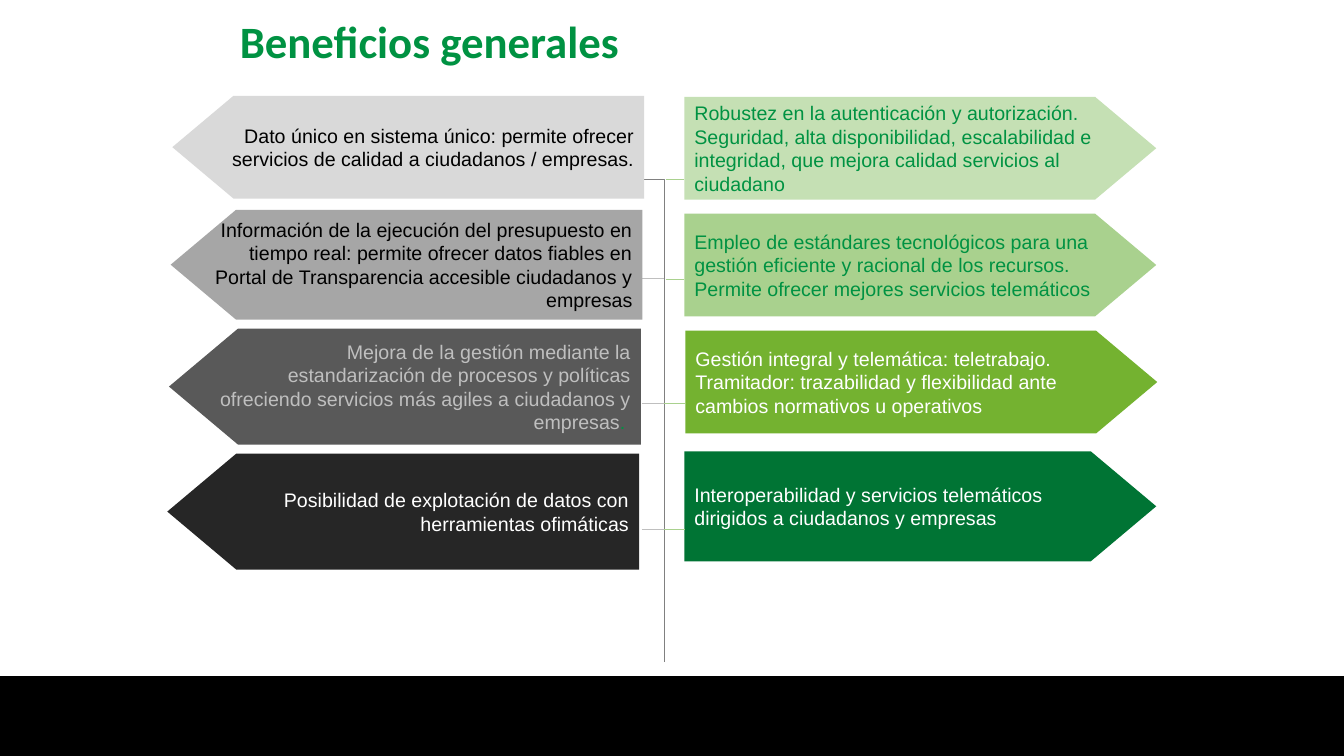
from dataclasses import dataclass

from lxml import etree
from pptx import Presentation
from pptx.dml.color import RGBColor
from pptx.enum.shapes import MSO_CONNECTOR, MSO_SHAPE
from pptx.enum.text import MSO_ANCHOR, PP_ALIGN
from pptx.oxml.ns import qn
from pptx.util import Pt

PLATE, RECTANGLE = MSO_SHAPE.PENTAGON, MSO_SHAPE.RECTANGLE
STRAIGHT = MSO_CONNECTOR.STRAIGHT
MIDDLE, BOTTOM = MSO_ANCHOR.MIDDLE, MSO_ANCHOR.BOTTOM
LEFT, RIGHT = PP_ALIGN.LEFT, PP_ALIGN.RIGHT


@dataclass(frozen=True)
class Theme:
    black: str = "000000"
    white: str = "FFFFFF"
    green: str = "009242"
    silver: str = "BFBFBF"
    trunk: str = "808080"
    branch: str = "A9D18E"
    grays: tuple = ("D9D9D9", "A6A6A6", "595959", "262626")
    greens: tuple = ("C5E0B4", "A9D18E", "74B230", "007434")
    title_font: str = "Calibri"
    body_font: str = "Arial"
    title_size: int = 32
    body_size: int = 14


class Page:
    def __init__(self, slide, theme):
        self.shapes = slide.shapes
        self.theme = theme

    def span(self, para, text, color, font, size, bold=False):
        run = para.add_run()
        run.text = text
        run.font.name, run.font.size, run.font.bold = font, Pt(size), bold
        run.font.color.rgb = RGBColor.from_string(color)

    def solid(self, kind, x, y, width, height, color):
        shape = self.shapes.add_shape(kind, Pt(x), Pt(y), Pt(width), Pt(height))
        shape.shadow.inherit = False
        shape.fill.solid()
        shape.fill.fore_color.rgb = RGBColor.from_string(color)
        shape.line.fill.background()
        return shape

    def plate(self, x, y, height, fill, paragraphs, points_left=False):
        """Each paragraph is a list of (text, color) spans."""
        shape = self.solid(PLATE, x, y, 337, height, fill)
        shape.adjustments[0] = 0.595
        if points_left:
            shape.rotation = 180
            shape._element.spPr.find(qn("a:xfrm")).set("flipV", "1")
        frame = shape.text_frame
        frame.word_wrap = True
        frame.vertical_anchor = MIDDLE
        for index, spans in enumerate(paragraphs):
            para = frame.add_paragraph() if index else frame.paragraphs[0]
            para.alignment = RIGHT if points_left else LEFT
            for text, color in spans:
                self.span(para, text, color, self.theme.body_font, self.theme.body_size)

    def title(self, text, x, y, width, height):
        frame = self.shapes.add_textbox(Pt(x), Pt(y), Pt(width), Pt(height)).text_frame
        frame.word_wrap = True
        frame.vertical_anchor = BOTTOM
        para = frame.paragraphs[0]
        para.line_spacing = 0.9
        theme = self.theme
        self.span(para, text, theme.green, theme.title_font, theme.title_size, bold=True)

    def branch(self, start, end, y, color):
        line = self.shapes.add_connector(STRAIGHT, Pt(start), Pt(y), Pt(end), Pt(y))
        line.line.color.rgb = RGBColor.from_string(color)
        line.line.width = Pt(0.5)
        etree.SubElement(line._element.spPr, qn("a:effectLst"))

    def trunk(self, points):
        (x, y), *rest = [(Pt(px), Pt(py)) for px, py in points]
        builder = self.shapes.build_freeform(x, y)
        builder.add_line_segments(rest, close=False)
        shape = builder.convert_to_shape()
        shape.shadow.inherit = False
        shape.fill.background()
        shape.line.color.rgb = RGBColor.from_string(self.theme.trunk)
        shape.line.width = Pt(1)


def main():
    theme = Theme()
    deck = Presentation()
    deck.slide_width, deck.slide_height = Pt(960), Pt(540)
    page = Page(deck.slides.add_slide(deck.slide_layouts[6]), theme)

    # Footer band
    page.solid(RECTANGLE, 0, 483, 960, 57, theme.black)

    # Central trunk and its left branches
    for y in (198.7, 288, 378):
        page.branch(458.5, 474.5, y, theme.silver)
    page.trunk([(474.5, 473), (474.5, 128.2), (456.5, 128.2)])

    # Gray benefits, pointing left: top, height, spans
    gray_plates = [
        (68.4, 73.4, [("Dato único en sistema único: permite ofrecer servicios de calidad "
                       "a ciudadanos / empresas.", theme.black)]),
        (149.8, 78.5, [("Información de la ejecución del presupuesto en tiempo real: permite "
                        "ofrecer datos fiables en Portal de Transparencia accesible "
                        "ciudadanos y empresas", theme.black)]),
        (234.7, 82.8, [("Mejora de la gestión mediante la estandarización de procesos y "
                        "políticas ofreciendo servicios más agiles a ciudadanos y empresas",
                        theme.silver), (". ", theme.green)]),
        (324, 82.8, [("Posibilidad de explotación de datos con herramientas ofimáticas",
                      theme.white)]),
    ]
    for row, (y, height, spans) in enumerate(gray_plates):
        page.plate(123.1 - 1.2 * row, y, height, theme.grays[row], [spans], points_left=True)

    # Green benefits, pointing right: left, top, height, text color, paragraphs
    green_plates = [
        (488.9, 69.2, 73.4, theme.green,
         ["Robustez en la autenticación y autorización. Seguridad, alta disponibilidad, "
          "escalabilidad e integridad, que mejora calidad servicios al ciudadano"]),
        (488.9, 152.6, 73.4, theme.green,
         ["Empleo de estándares tecnológicos para una gestión eficiente y racional de los "
          "recursos. Permite ofrecer mejores servicios telemáticos"]),
        (489.6, 236.2, 73.4, theme.white,
         ["Gestión integral y telemática: teletrabajo.",
          "Tramitador: trazabilidad y flexibilidad ante cambios normativos u operativos"]),
        (488.9, 322.4, 78.5, theme.white,
         ["Interoperabilidad y servicios telemáticos dirigidos a ciudadanos y empresas"]),
    ]
    for fill, (x, y, height, color, texts) in zip(theme.greens, green_plates):
        page.plate(x, y, height, fill, [[(text, color)] for text in texts])

    page.title("Beneficios generales", 164.2, 13.7, 336.2, 38.9)

    # Right branches
    for start, end, y in ((475.9, 488.9, 128.2), (475.9, 488.9, 199.4),
                          (474, 489.6, 288), (474, 489.6, 378)):
        page.branch(start, end, y, theme.branch)

    deck.save("out.pptx")


if __name__ == "__main__":
    main()
